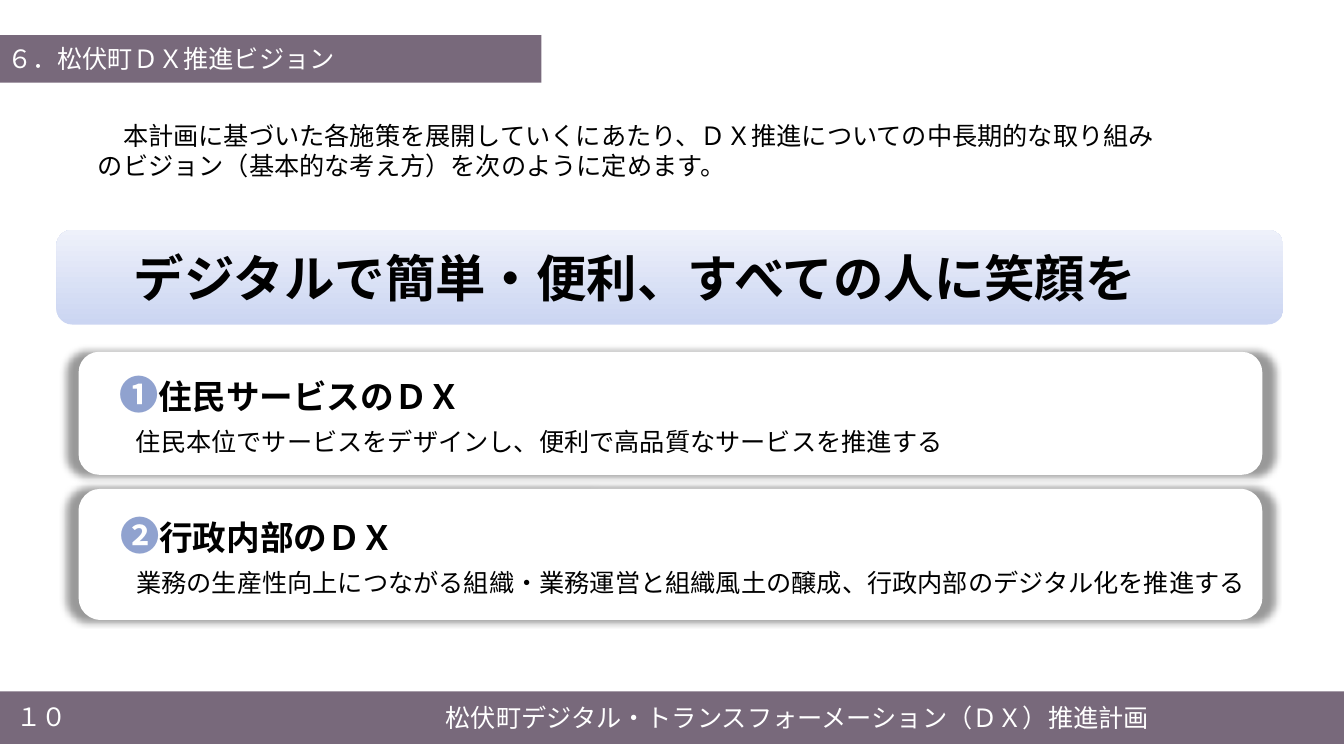
import pptx
import pptx.dml.color
import pptx.enum.shapes
import pptx.enum.text
import pptx.oxml
import pptx.util

FONT = "Noto Sans CJK JP"
COLORS = {"band": "78697B", "white": "FFFFFF", "black": "000000", "number": "90A2CF",
          "vision_low": "CBD5F2", "vision_high": "EEF1FA"}
RGB = {name: pptx.dml.color.RGBColor.from_string(code) for name, code in COLORS.items()}
SHAPE = pptx.enum.shapes.MSO_SHAPE
ALIGN = pptx.enum.text.PP_ALIGN
MIDDLE = pptx.enum.text.MSO_ANCHOR.MIDDLE
DRAWING = "http://schemas.openxmlformats.org/drawingml/2006/main"

deck = pptx.Presentation()
deck.slide_width = pptx.util.Inches(13.33)
deck.slide_height = pptx.util.Inches(7.5)
COLUMNS = 133.3
CELL = deck.slide_width / COLUMNS  # square grid, 75 rows high
page = deck.slides.add_slide(deck.slide_layouts[1])


def grid(*cells):
    """Turn counts of grid cells into lengths."""
    return [round(count * CELL) for count in cells]


def add_line(frame, spans, align=ALIGN.LEFT, indent=0, before=0):
    """Append a paragraph; each span is (text, size, color, bold)."""
    para = frame.paragraphs[0]
    if para.runs:
        para = frame.add_paragraph()
    para.alignment = align
    para.space_before = pptx.util.Pt(before)
    properties = para._p.get_or_add_pPr()
    properties.set("marL", str(grid(indent)[0]))
    properties.set("indent", "0")
    properties.append(pptx.oxml.parse_xml(f'<a:buNone xmlns:a="{DRAWING}"/>'))
    for text, size, color, bold in spans:
        span = para.add_run()
        span.text = text
        span.font.size = pptx.util.Pt(size)
        span.font.bold = bold
        span.font.name = FONT
        span.font.color.rgb = RGB[color]
        span._r.get_or_add_rPr().append(
            pptx.oxml.parse_xml(f'<a:ea xmlns:a="{DRAWING}" typeface="{FONT}"/>'))


# Bands behind the section title and the footer
bands = []
for place in [(0, 68.6, COLUMNS, 5.2), (0, 3.5, 53.7, 4.7)]:
    band = page.shapes.add_shape(SHAPE.RECTANGLE, *grid(*place))
    band.shadow.inherit = False
    band.fill.solid()
    band.fill.fore_color.rgb = RGB["band"]
    band.line.fill.background()
    page.shapes._spTree.insert(2, band._element)
    bands.append(band)

footer = bands[0].text_frame
footer.vertical_anchor = MIDDLE
footer.margin_left = grid(44.2)[0]
add_line(footer, [("松伏町デジタル・トランスフォーメーション（ＤＸ）推進計画", 18, "white", False)])

# Section title and introduction
title = page.shapes.title
title.left, title.top, title.width, title.height = grid(-0.3, 3.8, 40.4, 4)
title.text_frame.vertical_anchor = MIDDLE
add_line(title.text_frame, [("６．松伏町ＤＸ推進ビジョン", 18, "white", False)])

intro = page.placeholders[1]
intro.left, intro.top, intro.width, intro.height = grid(8.7, 11.4, 108.6, 7.1)
for text, indent in [
    ("本計画に基づいた各施策を展開していくにあたり、ＤＸ推進についての中長期的な取り組み", 2.5),
    ("のビジョン（基本的な考え方）を次のように定めます。", 0),
]:
    add_line(intro.text_frame, [(text, 18, "black", False)], indent=indent)

number_box = page.shapes.add_textbox(*grid(-0.1, 68.7, 8.5, 4.8))
number_box.text_frame.word_wrap = True
number_box.text_frame.vertical_anchor = MIDDLE
add_line(number_box.text_frame, [("１０", 18, "white", False)], ALIGN.CENTER)

# Vision statement
vision = page.shapes.add_shape(SHAPE.ROUNDED_RECTANGLE, *grid(5.6, 22.8, 121.7, 9.4))
vision.shadow.inherit = False
vision.line.fill.background()
vision.fill.gradient()
vision.fill.gradient_angle = 90
for stop, color in zip(vision.fill.gradient_stops, ["vision_low", "vision_high"]):
    stop.color.rgb = RGB[color]

slogan = page.shapes.add_textbox(*grid(7.9, 24, 115.2, 7.1))
slogan.text_frame.word_wrap = True
add_line(slogan.text_frame, [("デジタルで簡単・便利、すべての人に笑顔を", 36, "black", True)], indent=4.4)

# Two pillars of the vision
for top, height, number, heading, detail in [
    (34.9, 12.2, "❶", "住民サービスのＤＸ",
     "住民本位でサービスをデザインし、便利で高品質なサービスを推進する"),
    (48.5, 13, "❷", "行政内部のＤＸ",
     "業務の生産性向上につながる組織・業務運営と組織風土の醸成、行政内部のデジタル化を推進する"),
]:
    card = page.shapes.add_shape(SHAPE.ROUNDED_RECTANGLE, *grid(7.8, top, 117.4, height))
    card.fill.solid()
    card.fill.fore_color.rgb = RGB["white"]
    card.line.fill.background()
    card._element.spPr.append(pptx.oxml.parse_xml(
        f'<a:effectLst xmlns:a="{DRAWING}">'
        '<a:outerShdw blurRad="63500" sx="102000" sy="102000" algn="ctr" rotWithShape="0">'
        f'<a:srgbClr val="{COLORS["black"]}"><a:alpha val="40000"/></a:srgbClr>'
        '</a:outerShdw></a:effectLst>'))
    frame = card.text_frame
    frame.word_wrap = True
    frame.vertical_anchor = MIDDLE
    frame.margin_right = 0
    add_line(frame, [(number, 28, "number", True), (heading, 24, "black", True)], indent=2.5)
    add_line(frame, [(detail, 18, "black", False)], indent=4.1, before=6)

deck.save("out.pptx")
